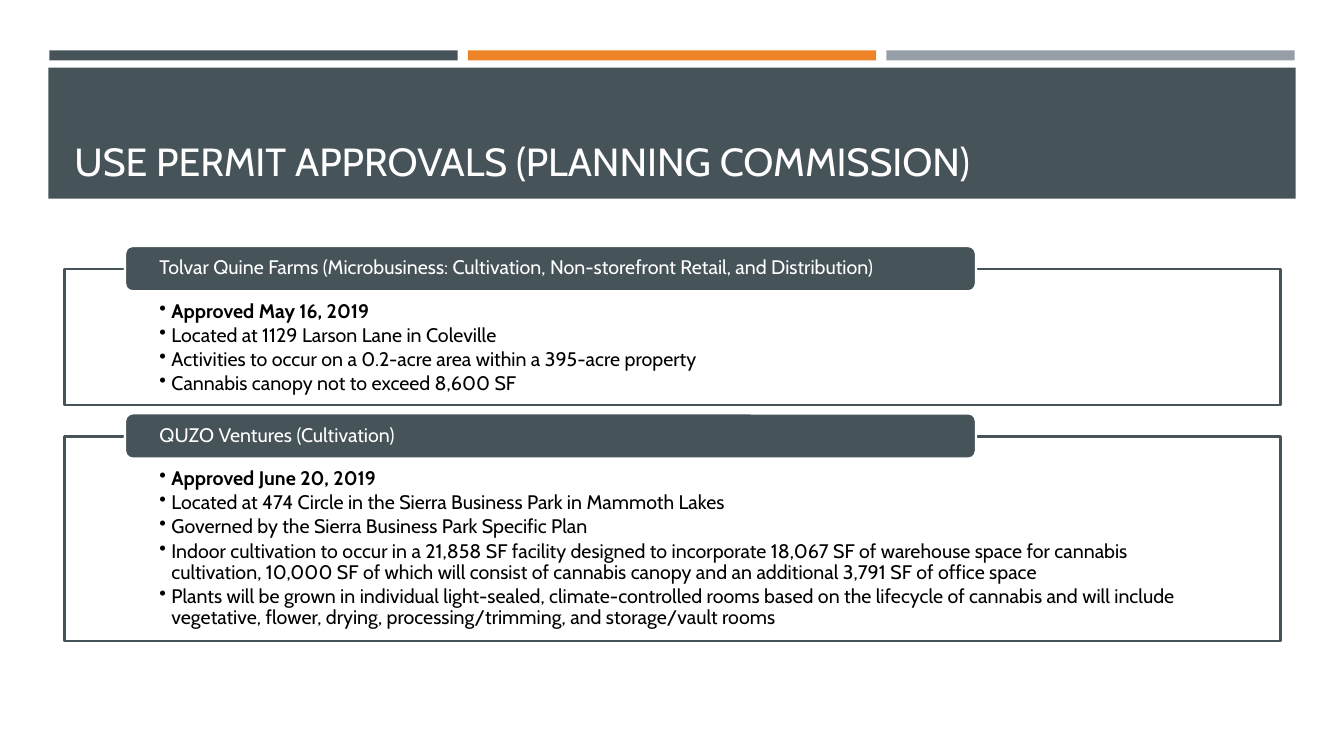
from dataclasses import dataclass

import pptx
import pptx.dml.color
import pptx.enum.shapes
import pptx.enum.text
import pptx.oxml
import pptx.oxml.ns
import pptx.presentation
import pptx.shapes.autoshape
import pptx.slide
import pptx.text.text
import pptx.util

RGBColor = pptx.dml.color.RGBColor
Shape = pptx.enum.shapes.MSO_SHAPE
Anchor = pptx.enum.text.MSO_ANCHOR

EMU_PER_PX = 9144
FONT = "Cabin"
SLATE = RGBColor(0x46, 0x53, 0x59)
ORANGE = RGBColor(0xED, 0x84, 0x28)
GRAY = RGBColor(0x96, 0x9F, 0xA7)
WHITE = RGBColor(0xFF, 0xFF, 0xFF)
TITLE_WHITE = RGBColor(0xFF, 0xFE, 0xFF)
BLACK = RGBColor(0x00, 0x00, 0x00)

CARD_LEFT, CARD_WIDTH = 64, 1206
TAB_LEFT, TAB_WIDTH, TAB_HEIGHT, TAB_RISE = 124, 844, 45, 23
STRIP_LEFT, STRIP_TOP, STRIP_WIDTH, STRIP_PITCH = 49, 50, 405, 415
BULLET_INDENT = 12


@dataclass(frozen=True)
class Box:
    """A rectangle on the slide, in px."""

    left: int
    top: int
    width: int
    height: int


@dataclass(frozen=True)
class Permit:
    """An approved permit and the place of its card."""

    top: int
    height: int
    heading: str
    approval: str
    details: tuple[str, ...]


PERMITS = (
    Permit(
        267, 135,
        "Tolvar Quine Farms (Microbusiness: Cultivation, Non-storefront Retail, and Distribution)",
        "Approved May 16, 2019",
        (
            "Located at 1129 Larson Lane in Coleville",
            "Activities to occur on a 0.2-acre area within a 395-acre property",
            "Cannabis canopy not to exceed 8,600 SF",
        ),
    ),
    Permit(
        433, 203,
        "QUZO Ventures (Cultivation)",
        "Approved June 20, 2019",
        (
            "Located at 474 Circle in the Sierra Business Park in Mammoth Lakes",
            "Governed by the Sierra Business Park Specific Plan",
            "Indoor cultivation to occur in a 21,858 SF facility designed to incorporate "
            "18,067 SF of warehouse space for cannabis cultivation, 10,000 SF of which will "
            "consist of cannabis canopy and an additional 3,791 SF of office space",
            "Plants will be grown in individual light-sealed, climate-controlled rooms based "
            "on the lifecycle of cannabis and will include vegetative, flower, drying, "
            "processing/trimming, and storage/vault rooms",
        ),
    ),
)


def px(length: int) -> pptx.util.Emu:
    """Turn px into EMU."""
    return pptx.util.Emu(length * EMU_PER_PX)


def add_block(
    slide: pptx.slide.Slide,
    box: Box,
    fill: RGBColor,
    line: RGBColor | None = None,
    kind: Shape = Shape.RECTANGLE,
) -> pptx.shapes.autoshape.Shape:
    """Draw a filled shape, outlined if a line colour is given."""
    shape = slide.shapes.add_shape(kind, px(box.left), px(box.top), px(box.width), px(box.height))
    shape.shadow.inherit = False
    shape.fill.solid()
    shape.fill.fore_color.rgb = fill
    if line is None:
        shape.line.fill.background()
    else:
        shape.line.color.rgb = line
        shape.line.width = pptx.util.Pt(1.75)
    return shape


def set_frame(
    frame: pptx.text.text.TextFrame, anchor: Anchor, side: int, top: int, bottom: int
) -> None:
    """Set the wrapping, anchor and insets of a text frame."""
    frame.word_wrap = True
    frame.vertical_anchor = anchor
    frame.margin_left = frame.margin_right = px(side)
    frame.margin_top, frame.margin_bottom = px(top), px(bottom)


def write(
    paragraph: pptx.text.text._Paragraph,
    text: str,
    *,
    size: int = 14,
    color: RGBColor = BLACK,
    bold: bool = False,
    space_after: float = 0,
    bullet: bool = False,
) -> None:
    """Put formatted text into a paragraph."""
    paragraph.alignment = pptx.enum.text.PP_ALIGN.LEFT
    paragraph.line_spacing = 0.9
    paragraph.space_after = pptx.util.Pt(space_after)
    run = paragraph.add_run()
    run.text = text
    run.font.name = FONT
    run.font.size = pptx.util.Pt(size)
    run.font.bold = bold
    run.font.color.rgb = color
    if bullet:
        properties = paragraph._p.get_or_add_pPr()
        properties.set("marL", str(px(BULLET_INDENT)))
        properties.set("indent", str(-px(BULLET_INDENT)))
        mark = pptx.oxml.parse_xml(f'<a:buChar {pptx.oxml.ns.nsdecls("a")} char="•"/>')
        properties.append(mark)


def add_banner(slide: pptx.slide.Slide, title: str) -> None:
    """Draw the three strips and the title band."""
    for index, color in enumerate((SLATE, ORANGE, GRAY)):
        left = STRIP_LEFT + index * STRIP_PITCH
        add_block(slide, Box(left, STRIP_TOP, STRIP_WIDTH, 10), color)
    add_block(slide, Box(48, 67, 1237, 130), SLATE)
    title_box = slide.shapes.add_textbox(px(CARD_LEFT), px(77), px(CARD_WIDTH), px(111))
    set_frame(title_box.text_frame, Anchor.BOTTOM, 10, 5, 5)
    write(title_box.text_frame.paragraphs[0], title, size=28, color=TITLE_WHITE)


def add_permit(slide: pptx.slide.Slide, permit: Permit) -> None:
    """Draw a permit's card with its heading tab."""
    card = add_block(slide, Box(CARD_LEFT, permit.top, CARD_WIDTH, permit.height), WHITE, SLATE)
    set_frame(card.text_frame, Anchor.TOP, 94, 32, 11)
    for index, text in enumerate((permit.approval, *permit.details)):
        paragraph = card.text_frame.add_paragraph() if index else card.text_frame.paragraphs[0]
        write(paragraph, text, bold=index == 0, space_after=2.1, bullet=True)
    tab_box = Box(TAB_LEFT, permit.top - TAB_RISE, TAB_WIDTH, TAB_HEIGHT)
    tab = add_block(slide, tab_box, SLATE, WHITE, Shape.ROUNDED_RECTANGLE)
    set_frame(tab.text_frame, Anchor.MIDDLE, 32, 0, 0)
    write(tab.text_frame.paragraphs[0], permit.heading, color=WHITE)


def main() -> None:
    """Build and save the presentation."""
    presentation = pptx.Presentation()
    presentation.slide_width, presentation.slide_height = px(1333), px(750)
    slide = presentation.slides.add_slide(presentation.slide_layouts[6])
    add_banner(slide, "USE PERMIT APPROVALS (PLANNING COMMISSION)")
    for permit in PERMITS:
        add_permit(slide, permit)
    presentation.save("out.pptx")


if __name__ == "__main__":
    main()
